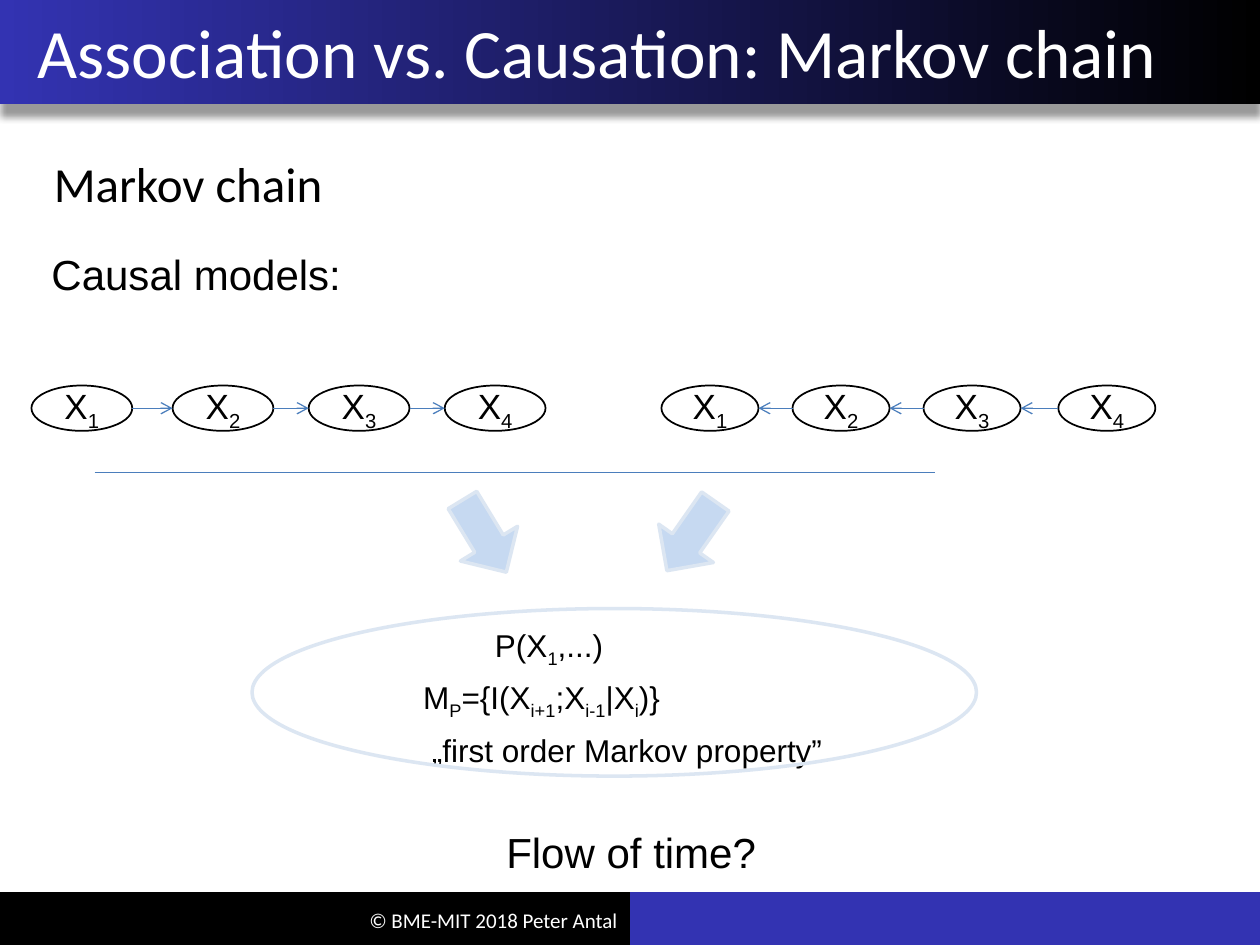
from dataclasses import dataclass
from itertools import pairwise

from lxml import etree
from pptx import Presentation
from pptx.dml.color import RGBColor
from pptx.enum.shapes import MSO_CONNECTOR, MSO_SHAPE
from pptx.enum.text import MSO_ANCHOR, MSO_AUTO_SIZE, PP_ALIGN
from pptx.oxml import parse_xml
from pptx.oxml.ns import nsdecls, qn
from pptx.util import Inches, Pt

RECT, OVAL, DOWN = MSO_SHAPE.RECTANGLE, MSO_SHAPE.OVAL, MSO_SHAPE.DOWN_ARROW
STRAIGHT = MSO_CONNECTOR.STRAIGHT
LEFT, CENTER, RIGHT = PP_ALIGN.LEFT, PP_ALIGN.CENTER, PP_ALIGN.RIGHT
TOP, MIDDLE = MSO_ANCHOR.TOP, MSO_ANCHOR.MIDDLE
GROW = MSO_AUTO_SIZE.SHAPE_TO_FIT_TEXT


@dataclass(frozen=True)
class Theme:
    """Colours, fonts and type sizes of the slide."""
    black: str = "000000"
    white: str = "FFFFFF"
    blue: str = "3333B2"
    link: str = "4B7EBC"
    pale: str = "C6D9F1"
    rim: str = "DCE6F2"
    head: str = "Calibri"
    body: str = "Arial"
    title: float = 39.6
    topic: float = 28
    label: float = 24
    node: float = 20
    note: float = 18
    foot: float = 12


THEME = Theme()


def rgb(code):
    """Turn a hex code into a colour."""
    return RGBColor.from_string(code)


def write(frame, parts, size, font, color=THEME.black, align=LEFT):
    """Fill a frame with runs, every second one a subscript."""
    para = frame.paragraphs[0]
    para.alignment = align
    para.font.size = Pt(size)
    para.font.name = font
    para.font.color.rgb = rgb(color)
    for i, part in enumerate(parts):
        run = para.add_run()
        run.text = part
        if i % 2:
            run._r.get_or_add_rPr().set("baseline", "-25000")


def add_text(shapes, box, parts, size, font=THEME.body, color=THEME.black,
             align=LEFT, anchor=TOP, wrap=False):
    """Add a text box that either wraps or grows with its text."""
    frame = shapes.add_textbox(*map(Inches, box)).text_frame
    frame.word_wrap = wrap
    if not wrap:
        frame.auto_size = GROW
    frame.vertical_anchor = anchor
    write(frame, parts, size, font, color, align)


def add_form(shapes, kind, box, fill=None, line=None, width=1, turn=0):
    """Add a preset shape with plain fill and outline."""
    form = shapes.add_shape(kind, *map(Inches, box))
    form.shadow.inherit = False
    form.rotation = turn
    if fill:
        form.fill.solid()
        form.fill.fore_color.rgb = rgb(fill)
    else:
        form.fill.background()
    if line:
        form.line.color.rgb = rgb(line)
        form.line.width = Pt(width)
    else:
        form.line.fill.background()
    return form


def add_line(shapes, start, end, y, arrow=False):
    """Add a level line, with an open arrowhead at its end if asked."""
    line = shapes.add_connector(
        STRAIGHT, Inches(start), Inches(y), Inches(end), Inches(y))
    line.line.color.rgb = rgb(THEME.link)
    line.line.width = Pt(0.75)
    etree.SubElement(line._element.spPr, qn("a:effectLst"))
    if arrow:
        tail = etree.SubElement(line.line._get_or_add_ln(), qn("a:tailEnd"))
        tail.set("type", "arrow")


def add_chain(shapes, lefts, width, back=False):
    """Add a row of numbered nodes joined by arrows."""
    top, height = 3.06, 0.36
    for i, left in enumerate(lefts, 1):
        node = add_form(shapes, OVAL, (left, top, width, height),
                        line=THEME.black)
        frame = node.text_frame
        frame.word_wrap = False
        frame.vertical_anchor = MIDDLE
        write(frame, ("X", str(i)), THEME.node, THEME.body, align=CENTER)
    for left, right in pairwise(lefts):
        ends = (left + width, right)
        start, end = reversed(ends) if back else ends
        add_line(shapes, start, end, top + height / 2, arrow=True)


def add_frame(shapes):
    """Add the title band, the footer bands and their texts."""
    add_form(shapes, RECT, (5, 7.08, 5, 0.42), THEME.blue)
    add_form(shapes, RECT, (0, 7.08, 5, 0.42), THEME.black)
    band = add_form(shapes, RECT, (0, 0, 10, 0.83), THEME.blue)
    band.fill.gradient()
    band.fill.gradient_angle = 0
    for stop, color in zip(band.fill.gradient_stops,
                           (THEME.blue, THEME.black)):
        stop.color.rgb = rgb(color)
    glow = parse_xml(
        f'<a:outerShdw {nsdecls("a")} blurRad="{Pt(4)}" dist="{Pt(7)}" '
        f'dir="5400000" rotWithShape="0"><a:srgbClr val="{THEME.black}">'
        '<a:alpha val="40000"/></a:srgbClr></a:outerShdw>')
    band._element.spPr.find(qn("a:effectLst")).append(glow)
    add_text(shapes, (1.17, 7.1, 3.83, 0.4), ["© BME-MIT 2018 Peter Antal"],
             THEME.foot, THEME.head, THEME.white, RIGHT, MIDDLE, True)
    add_text(shapes, (0.2, 0, 9.65, 0.81),
             ["Association vs. Causation: Markov chain"],
             THEME.title, THEME.head, THEME.white, LEFT, MIDDLE, True)


def main():
    """Build and save the slide."""
    deck = Presentation()
    deck.slide_width, deck.slide_height = Inches(10), Inches(7.5)
    shapes = deck.slides.add_slide(deck.slide_layouts[6]).shapes
    add_frame(shapes)
    add_text(shapes, (0.33, 1.17, 9.17, 5.53), ["Markov chain"],
             THEME.topic, THEME.head, wrap=True)
    add_line(shapes, 0.75, 7.42, 3.75)
    add_text(shapes, (0.31, 1.92, 2.52, 0.5), ["Causal models:"], THEME.label)
    add_chain(shapes, (0.25, 1.37, 2.45, 3.53), 0.8)
    group = shapes.add_group_shape()
    add_chain(group.shapes, (5.25, 6.29, 7.33, 8.4), 0.77, back=True)
    for left, turn in ((5.22, 35), (3.58, 328.7)):
        add_form(shapes, DOWN, (left, 3.92, 0.53, 0.67), THEME.pale,
                 THEME.rim, 2, turn)
    add_text(shapes, (3.92, 6.51, 2.2, 0.5), ["Flow of time?"], THEME.label)
    notes = (
        ((3.26, 5.33, 2.24, 0.4),
         ("M", "P", "={I(X", "i+1", ";X", "i-1", "|X", "i", ")}")),
        ((3.83, 4.92, 1.15, 0.4), ("P(X", "1", ",...)")),
        ((3.33, 5.75, 3.33, 0.4), ("„first order Markov property”",)),
    )
    for box, parts in notes:
        add_text(shapes, box, parts, THEME.note)
    add_form(shapes, OVAL, (2, 4.83, 5.75, 1.33), line=THEME.rim, width=2)
    deck.save("out.pptx")


if __name__ == "__main__":
    main()
